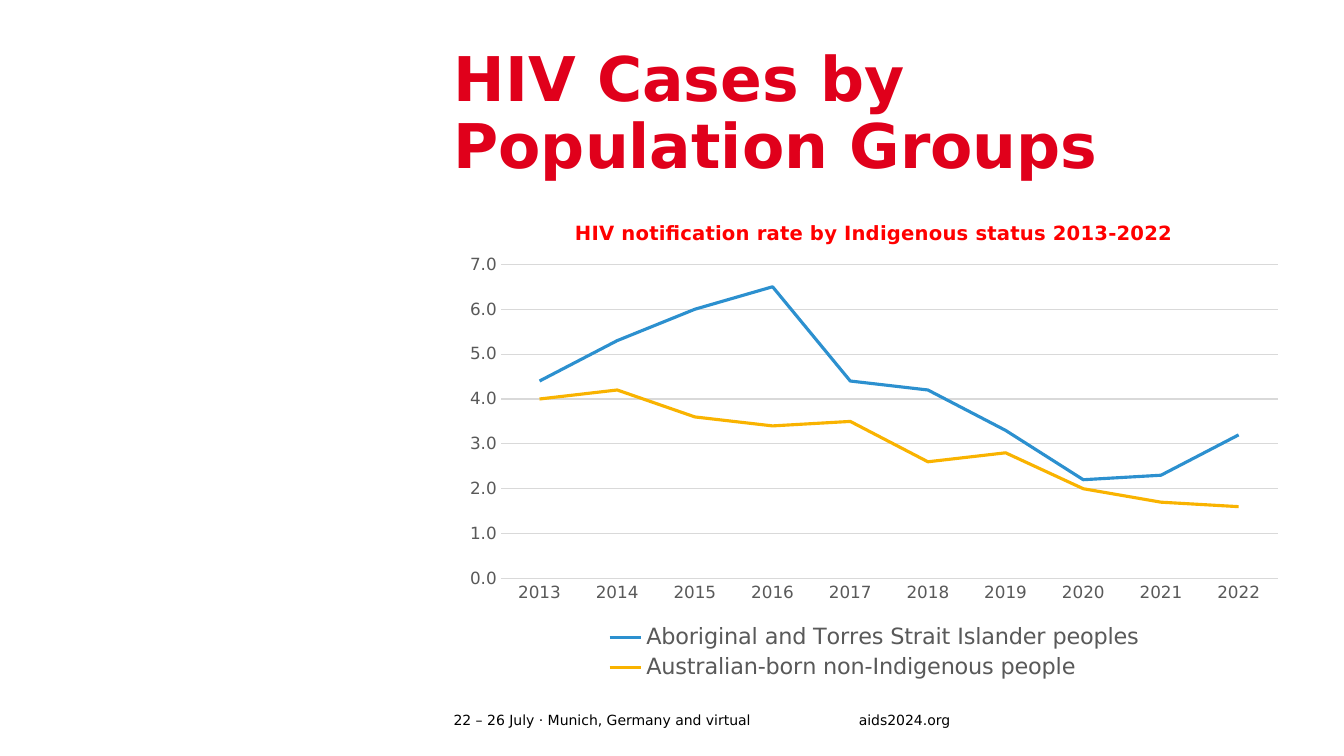
from dataclasses import dataclass

from lxml.etree import SubElement
from pptx import Presentation
from pptx.chart.data import CategoryChartData
from pptx.dml.color import RGBColor
from pptx.enum.chart import XL_CHART_TYPE, XL_LEGEND_POSITION, XL_MARKER_STYLE, XL_TICK_MARK
from pptx.enum.text import MSO_ANCHOR
from pptx.oxml.ns import qn
from pptx.util import Inches, Pt

COLUMNS, ROWS = 80, 45


@dataclass(frozen=True)
class Theme:
    font: str = "DejaVu Sans"
    heading: str = "E0001B"
    chart_title: str = "FF0000"
    text: str = "000000"
    label: str = "595959"
    grid: str = "D9D9D9"
    series: tuple = ("2C90CF", "F9B300")
    heading_size: int = 44
    legend_size: int = 16
    chart_title_size: int = 14
    axis_size: int = 12
    footer_size: int = 10
    grid_width: float = 0.75
    series_width: float = 2.25


def set_attributes(target, values):
    for name, value in values.items():
        setattr(target, name, value)


def set_layout(element, position, **shares):
    """Fix a chart part at shares of the chart's size."""
    for old in element.findall(qn("c:layout")):
        element.remove(old)
    layout = SubElement(element, qn("c:layout"))
    element.insert(position, layout)
    manual = SubElement(layout, qn("c:manualLayout"))
    settings = {"xMode": "edge", "yMode": "edge", **shares}
    if "w" in shares:
        settings = {"layoutTarget": "inner", **settings}
    for name, value in settings.items():
        SubElement(manual, qn(f"c:{name}")).set("val", str(value))


class SlideBuilder:
    def __init__(self, presentation, theme):
        self.theme = theme
        self.column = presentation.slide_width / COLUMNS
        self.row = presentation.slide_height / ROWS
        self.slide = presentation.slides.add_slide(presentation.slide_layouts[6])

    def place(self, left, top, width, height):
        return (round(left * self.column), round(top * self.row),
                round(width * self.column), round(height * self.row))

    def style_font(self, font, size, color, bold=False):
        set_attributes(font, {"name": self.theme.font, "size": Pt(size), "bold": bold})
        font.color.rgb = RGBColor.from_string(color)

    def style_line(self, line, color, width):
        line.color.rgb = RGBColor.from_string(color)
        line.width = Pt(width)

    def text(self, words, area, size, color, bold=False, anchor=MSO_ANCHOR.MIDDLE, spacing=1.0):
        frame = self.slide.shapes.add_textbox(*self.place(*area)).text_frame
        set_attributes(frame, {"word_wrap": True, "vertical_anchor": anchor, "margin_left": 0,
                               "margin_right": 0, "margin_top": 0, "margin_bottom": 0})
        paragraph = frame.paragraphs[0]
        paragraph.line_spacing = spacing
        run = paragraph.add_run()
        run.text = words
        self.style_font(run.font, size, color, bold)

    def line_chart(self, title, categories, series, area):
        theme = self.theme
        data = CategoryChartData(number_format="0.0")
        data.categories = categories
        for name, values in series.items():
            data.add_series(name, values)
        chart = self.slide.shapes.add_chart(
            XL_CHART_TYPE.LINE, *self.place(*area), data).chart
        self.style_font(chart.font, theme.footer_size, theme.text)

        chart.has_title = True
        paragraph = chart.chart_title.text_frame.paragraphs[0]
        run = paragraph.add_run()
        run.text = title
        self.style_font(run.font, theme.chart_title_size, theme.chart_title, True)
        chart.chart_title.include_in_layout = False
        set_layout(chart.element.find(f".//{qn('c:title')}"), 1, x=0.14, y=0.04)
        set_layout(chart.element.find(f".//{qn('c:plotArea')}"), 0,
                   x=0.056, y=0.139, w=0.923, h=0.644)

        chart.has_legend = True
        set_attributes(chart.legend, {"position": XL_LEGEND_POSITION.BOTTOM,
                                      "include_in_layout": False})
        self.style_font(chart.legend.font, theme.legend_size, theme.label)

        for axis in (chart.category_axis, chart.value_axis):
            set_attributes(axis, {"major_tick_mark": XL_TICK_MARK.NONE,
                                  "minor_tick_mark": XL_TICK_MARK.NONE})
            self.style_font(axis.tick_labels.font, theme.axis_size, theme.label)
        self.style_line(chart.category_axis.format.line, theme.grid, theme.grid_width)
        values_axis = chart.value_axis
        set_attributes(values_axis, {"minimum_scale": 0, "maximum_scale": 7, "major_unit": 1,
                                     "has_major_gridlines": True})
        set_attributes(values_axis.tick_labels, {"number_format": "0.0",
                                                 "number_format_is_linked": False})
        values_axis.format.line.fill.background()
        self.style_line(values_axis.major_gridlines.format.line, theme.grid, theme.grid_width)

        plot = chart.plots[0]
        plot.vary_by_categories = False
        for line, color in zip(plot.series, theme.series):
            line.smooth = False
            line.marker.style = XL_MARKER_STYLE.NONE
            self.style_line(line.format.line, color, theme.series_width)


def main():
    presentation = Presentation()
    set_attributes(presentation, {"slide_width": Inches(13.33), "slide_height": Inches(7.5)})
    theme = Theme()
    builder = SlideBuilder(presentation, theme)
    left, width = 27, 50.1
    footer_top, footer_height, footer_split = 42.12, 1.44, 24.12

    builder.text("22 – 26 July · Munich, Germany and virtual",
                 (left, footer_top, footer_split, footer_height), theme.footer_size, theme.text)
    builder.text("aids2024.org", (left + footer_split, footer_top, 11.58, footer_height),
                 theme.footer_size, theme.text)
    builder.text("HIV Cases by Population Groups", (left, 2.88, width, 8.04),
                 theme.heading_size, theme.heading, True, MSO_ANCHOR.TOP, 0.9)
    builder.line_chart(
        "HIV notification rate by Indigenous status 2013-2022",
        [str(year) for year in range(2013, 2023)],
        {
            "Aboriginal and Torres Strait Islander peoples":
                (4.4, 5.3, 6.0, 6.5, 4.4, 4.2, 3.3, 2.2, 2.3, 3.2),
            "Australian-born non-Indigenous people":
                (4.0, 4.2, 3.6, 3.4, 3.5, 2.6, 2.8, 2.0, 1.7, 1.6),
        },
        (left, 11.7, width, 29.04))
    presentation.save("out.pptx")


if __name__ == "__main__":
    main()
